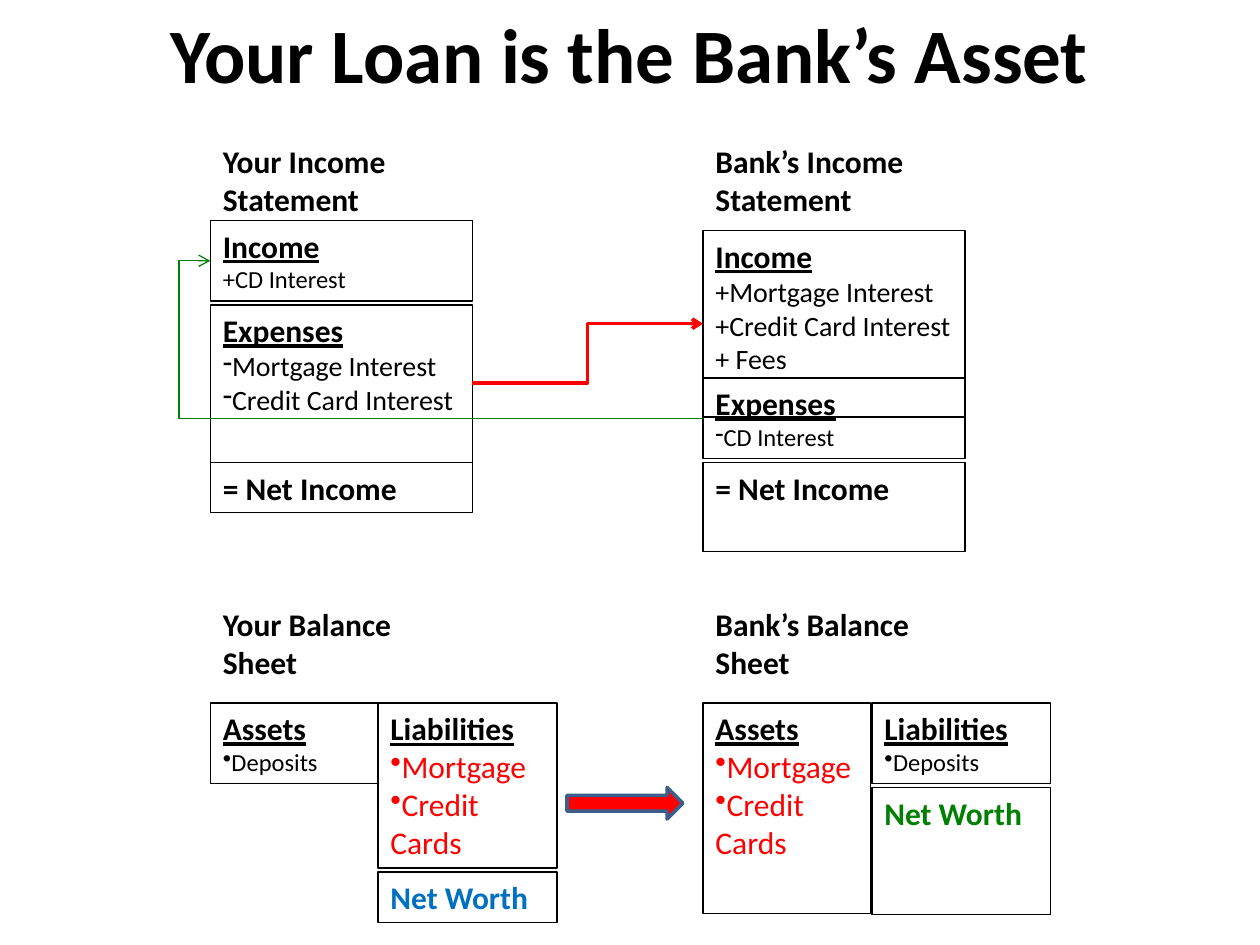
"""Build a slide that sets your loan against the bank's asset."""
from dataclasses import dataclass

import pptx
import pptx.dml.color
import pptx.enum.shapes
import pptx.enum.text
import pptx.oxml
import pptx.oxml.ns
import pptx.util
from pptx.util import Inches

Kind = pptx.enum.shapes.MSO_SHAPE
Align = pptx.enum.text.PP_ALIGN


@dataclass(frozen=True)
class Theme:
    font: str = "Calibri"
    black: str = "000000"
    red: str = "FF0000"
    green: str = "008000"
    blue: str = "0070C0"
    edge: str = "3A5F8C"
    title: int = 44
    head: int = 18
    body: int = 16
    small: int = 14
    thin: float = 0.75
    thick: float = 2


THEME = Theme()
YOU, BANK = 1.67, 5.58
WIDE, LEFT, RIGHT = 2.08, 1.33, 1.42
SHEET = 5.58


def rgb(code):
    return pptx.dml.color.RGBColor.from_string(code)


def stroke(line, color, width):
    line.color.rgb = rgb(color)
    line.width = pptx.util.Pt(width)


def add(parent, tag, **attrs):
    node = pptx.oxml.ns.qn(tag)
    child = parent.makeelement(node, attrs)
    parent.append(child)
    return child


def para(frame, text, size, color=THEME.black, bold=False, under=None,
         mark=None, align=Align.LEFT):
    first = frame.paragraphs[0]
    item = frame.add_paragraph() if first.runs else first
    item.add_run().text = text
    item.alignment = align
    if mark:
        props = item._p.get_or_add_pPr()
        props.set("marL", "0")
        props.set("indent", "0")
        add(props, "a:buChar", char=mark)
    font = item.font
    font.name, font.size = THEME.font, pptx.util.Pt(size)
    font.bold, font.underline = bold, under
    font.color.rgb = rgb(color)


def prep(frame):
    frame.word_wrap = True
    frame.vertical_anchor = pptx.enum.text.MSO_ANCHOR.TOP
    return frame


def label(slide, area, text, size=THEME.head, align=Align.LEFT):
    box = slide.shapes.add_textbox(*map(Inches, area))
    para(prep(box.text_frame), text, size, bold=True, align=align)


def panel(slide, area, head, rows=(), size=THEME.body, mark=None,
          tint=THEME.black, color=THEME.black):
    box = slide.shapes.add_shape(Kind.RECTANGLE, *map(Inches, area))
    box.shadow.inherit = False
    box.fill.background()
    stroke(box.line, THEME.black, THEME.thin)
    frame = prep(box.text_frame)
    para(frame, head, THEME.head, color, bold=True, under=bool(rows) or None)
    for row in rows:
        para(frame, row, size, tint, mark=mark)


def link(slide, start, end, color, width, bend=0.5):
    elbow = pptx.enum.shapes.MSO_CONNECTOR.ELBOW
    wire = slide.shapes.add_connector(elbow, *map(Inches, start + end))
    stroke(wire.line, color, width)
    add(wire.line._get_or_add_ln(), "a:tailEnd", type="arrow")
    props = wire._element.spPr
    guides = props.find(".//" + pptx.oxml.ns.qn("a:avLst"))
    add(guides, "a:gd", name="adj1", fmla=f"val {round(bend * 100000)}")
    add(props, "a:effectLst")


def arrow(slide, area):
    shape = slide.shapes.add_shape(Kind.RIGHT_ARROW, *map(Inches, area))
    shape.shadow.inherit = False
    shape.fill.solid()
    shape.fill.fore_color.rgb = rgb(THEME.red)
    stroke(shape.line, THEME.edge, THEME.thick)


def income(slide):
    panel(slide, (YOU, 1.75, WIDE, 0.64), "Income", ["+CD Interest"],
          THEME.small)
    panel(slide, (YOU, 2.42, WIDE, 1.25), "Expenses",
          ["Mortgage Interest", "Credit Card Interest"], mark="-")
    panel(slide, (YOU, 3.67, WIDE, 0.4), "= Net Income")
    panel(slide, (BANK, 1.83, WIDE, 1.48), "Income",
          ["+Mortgage Interest", "+Credit Card Interest", "+ Fees"])
    panel(slide, (BANK, 3, WIDE, 0.64), "Expenses", ["CD Interest"],
          THEME.small, "-")
    panel(slide, (BANK, 3.67, WIDE, 0.71), "= Net Income")


def balance(slide):
    loans = ["Mortgage", "Credit Cards"]
    debt = dict(rows=loans, size=THEME.head, mark="•", tint=THEME.red)
    cash = dict(rows=["Deposits"], size=THEME.small, mark="•")
    mine, theirs = YOU + LEFT, BANK + LEFT + 0.01
    panel(slide, (YOU, SHEET, LEFT, 0.64), "Assets", **cash)
    panel(slide, (mine, SHEET, RIGHT, 1.31), "Liabilities", **debt)
    panel(slide, (mine, 6.92, RIGHT, 0.4), "Net Worth", color=THEME.blue)
    panel(slide, (BANK, SHEET, LEFT, 1.67), "Assets", **debt)
    panel(slide, (theirs, SHEET, RIGHT, 0.64), "Liabilities", **cash)
    panel(slide, (theirs, 6.25, RIGHT, 1.01), "Net Worth", color=THEME.green)


def main():
    deck = pptx.Presentation()
    deck.slide_width, deck.slide_height = Inches(10), Inches(7.5)
    slide = deck.slides.add_slide(deck.slide_layouts[6])
    for left, who in ((YOU, "Your"), (BANK, "Bank’s")):
        for top, what in ((1.08, "Income Statement"), (4.75, "Balance Sheet")):
            label(slide, (left, top, WIDE, 0.71), f"{who} {what}")
    income(slide)
    balance(slide)
    link(slide, (YOU + WIDE, 3.04), (BANK, 2.57), THEME.red, THEME.thick)
    link(slide, (BANK, 3.32), (YOU, 2.07), THEME.green, THEME.thin, 1.064)
    arrow(slide, (4.5, 6.25, 0.92, 0.25))
    label(slide, (0.5, 0, 9, 1.25), "Your Loan is the Bank’s Asset",
          THEME.title, Align.CENTER)
    deck.save("out.pptx")


if __name__ == "__main__":
    main()
